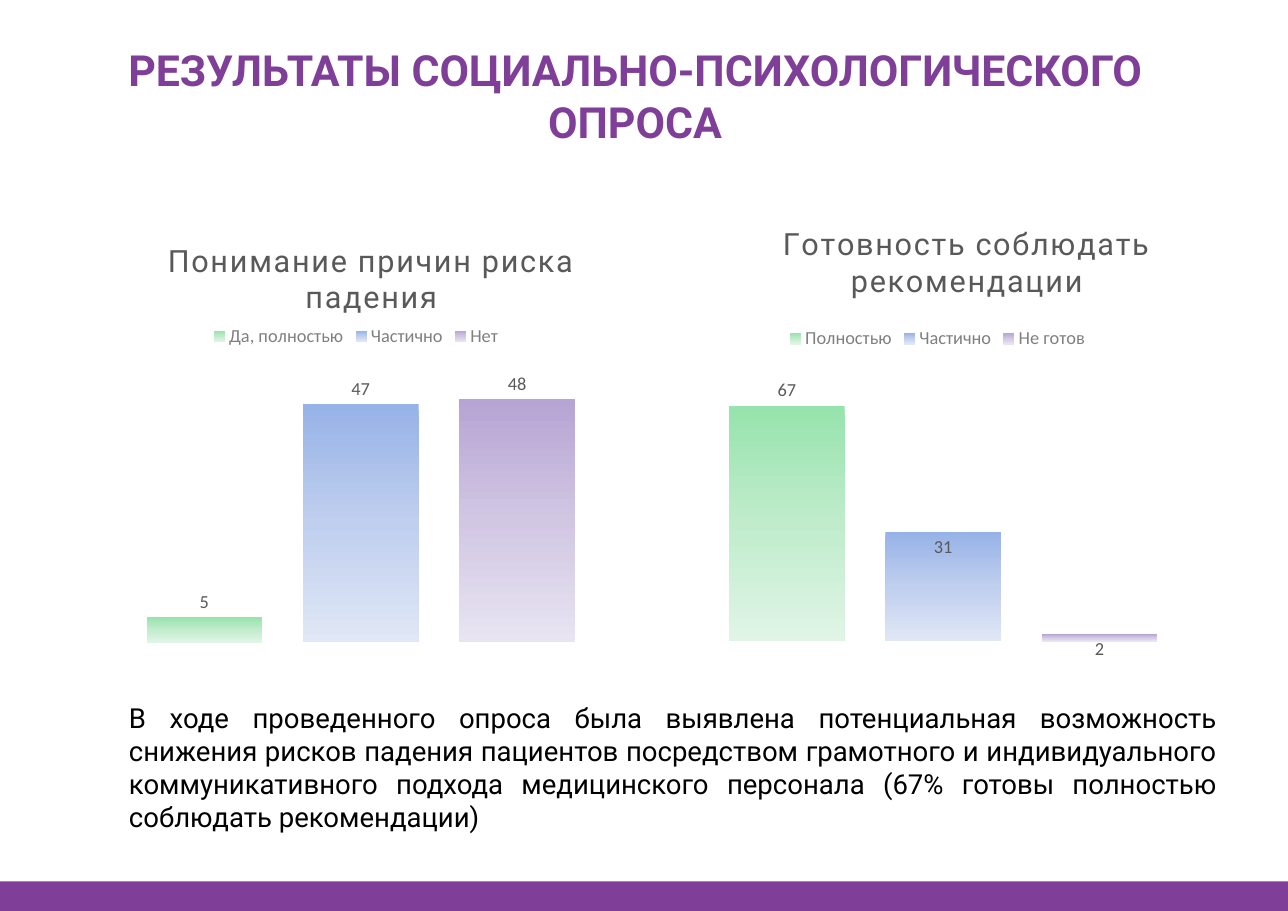
from copy import deepcopy
from dataclasses import dataclass
from typing import Any, NamedTuple

from lxml import etree
from pptx import Presentation
from pptx.chart.data import CategoryChartData
from pptx.dml.color import RGBColor
from pptx.enum.chart import XL_CHART_TYPE, XL_LABEL_POSITION, XL_LEGEND_POSITION
from pptx.enum.shapes import MSO_SHAPE
from pptx.enum.text import MSO_ANCHOR, MSO_AUTO_SIZE, PP_ALIGN
from pptx.oxml.ns import qn
from pptx.util import Cm, Pt

COLUMNS = XL_CHART_TYPE.COLUMN_CLUSTERED
ABOVE, INSIDE = XL_LABEL_POSITION.OUTSIDE_END, XL_LABEL_POSITION.INSIDE_END
LEGEND_TOP = XL_LEGEND_POSITION.TOP
RECTANGLE = MSO_SHAPE.RECTANGLE
TOP = MSO_ANCHOR.TOP
FIXED_SIZE = MSO_AUTO_SIZE.NONE
CENTER, JUSTIFY = PP_ALIGN.CENTER, PP_ALIGN.JUSTIFY


class TextStyle(NamedTuple):
    face: str
    size: int
    color: str
    bold: bool = False


@dataclass(frozen=True)
class Theme:
    purple: str = "7F3F98"
    heading: TextStyle = TextStyle("Roboto", 28, "7F3F98", True)
    conclusion: TextStyle = TextStyle("Roboto", 18, "000000")
    chart: TextStyle = TextStyle("Calibri", 10, "000000")
    question: TextStyle = TextStyle("Roboto", 20, "595959")
    legend: TextStyle = TextStyle("Calibri", 12, "808080")
    value: TextStyle = TextStyle("Calibri", 12, "595959")
    gradients: tuple[tuple[str, ...], ...] = (
        ("97E3AD", "C0ECCC", "E0F5E6"),
        ("97B2E7", "C0CFEE", "E0E7F6"),
        ("B6A4D4", "D1C7E3", "E8E4F1"),
    )


class Box(NamedTuple):
    left: float
    top: float
    width: float
    height: float

    def lengths(self) -> list[int]:
        return [Cm(value) for value in self]


class Answer(NamedTuple):
    label: str
    percent: int
    label_position: Any


@dataclass(frozen=True)
class Survey:
    question: str
    box: Box
    answers: tuple[Answer, ...]
    axis_maximum: int
    question_at: dict[str, float]
    legend_at: dict[str, float]
    plot_at: dict[str, float]


THEME = Theme()
SLIDE_WIDTH, SLIDE_HEIGHT = 29.7, 21.0
HEADING_BOX = Box(1.88, 0.89, 25.53, 2.64)
CONCLUSION_BOX = Box(2.72, 16.03, 25.6, 3.33)
FOOTER_BOX = Box(0, 20.32, SLIDE_WIDTH, 0.68)
HEADING = "РЕЗУЛЬТАТЫ СОЦИАЛЬНО-ПСИХОЛОГИЧЕСКОГО ОПРОСА"
CONCLUSION = (
    "В ходе проведенного опроса была выявлена потенциальная возможность снижения "
    "рисков падения пациентов посредством грамотного и индивидуального "
    "коммуникативного подхода медицинского персонала (67% готовы полностью "
    "соблюдать рекомендации)"
)
SURVEYS = (
    Survey(
        "Понимание причин риска падения",
        Box(0.74, 4.8, 15.01, 10.01),
        (Answer("Да, полностью", 5, ABOVE), Answer("Частично", 47, ABOVE), Answer("Нет", 48, ABOVE)),
        60,
        {"x": 0.2, "y": 0.06},
        {"x": 0.27, "y": 0.26},
        {"x": 0.03, "y": 0.3, "w": 0.95, "h": 0.7},
    ),
    Survey(
        "Готовность соблюдать рекомендации",
        Box(14.17, 4.8, 15.01, 10.62),
        (Answer("Полностью", 67, ABOVE), Answer("Частично", 31, INSIDE), Answer("Не готов", 2, INSIDE)),
        80,
        {"x": 0.25, "y": 0.02},
        {"x": 0.26, "y": 0.25},
        {"x": 0.03, "y": 0.33, "w": 0.95, "h": 0.61},
    ),
)


def apply(target: Any, values: dict[str, Any]) -> None:
    for attribute, value in values.items():
        setattr(target, attribute, value)


def style_font(font: Any, style: TextStyle) -> None:
    apply(font, {"name": style.face, "size": Pt(style.size), "bold": style.bold})
    font.color.rgb = RGBColor.from_string(style.color)


def place(part: Any, index: int, fractions: dict[str, float]) -> None:
    for old_layout in part.findall(qn("c:layout")):
        part.remove(old_layout)
    layout = etree.Element(qn("c:layout"))
    manual = etree.SubElement(layout, qn("c:manualLayout"))
    settings: dict[str, Any] = {"layoutTarget": "inner"} if "w" in fractions else {}
    settings |= {"xMode": "edge", "yMode": "edge"} | fractions
    for tag, value in settings.items():
        etree.SubElement(manual, qn(f"c:{tag}")).set("val", str(value))
    part.insert(index, layout)


def fill_placeholder(placeholder: Any, text: str, box: Box, style: TextStyle, alignment: Any) -> None:
    apply(placeholder, dict(zip(("left", "top", "width", "height"), box.lengths())))
    frame = placeholder.text_frame
    frame.text = text
    apply(frame, {"word_wrap": True, "auto_size": FIXED_SIZE, "vertical_anchor": TOP})
    paragraph = frame.paragraphs[0]
    apply(paragraph, {"alignment": alignment, "space_before": Pt(0), "line_spacing": 1.0})
    properties = paragraph._p.get_or_add_pPr()
    for indent in ("marL", "indent"):
        properties.set(indent, "0")
    etree.SubElement(properties, qn("a:buNone"))
    style_font(paragraph.runs[0].font, style)


def paint_gradient(series: Any, colors: tuple[str, ...]) -> None:
    fill = series.format.fill
    fill.gradient()
    fill.gradient_angle = 270
    stop_list = series._element.find(f".//{qn('a:gsLst')}")
    stop_list.insert(1, deepcopy(stop_list[0]))
    for position, (stop, color) in enumerate(zip(fill.gradient_stops, colors)):
        stop.position = position / 2
        stop.color.rgb = RGBColor.from_string(color)


def draw_survey(slide: Any, survey: Survey) -> None:
    data = CategoryChartData()
    data.categories = ["1"]
    for answer in survey.answers:
        data.add_series(answer.label, [answer.percent])
    chart = slide.shapes.add_chart(COLUMNS, *survey.box.lengths(), data).chart
    style_font(chart.font, THEME.chart)
    apply(chart, {"has_title": True, "has_legend": True})

    question = chart.chart_title.text_frame
    question.text = survey.question
    question_run = question.paragraphs[0].runs[0]
    style_font(question_run.font, THEME.question)
    question_run._r.get_or_add_rPr().set("spc", "100")
    apply(chart.legend, {"position": LEGEND_TOP, "include_in_layout": False})
    style_font(chart.legend.font, THEME.legend)

    place(chart.chart_title._element, 1, survey.question_at)
    place(chart.legend._element, 1, survey.legend_at)
    place(chart._chartSpace.chart.plotArea, 0, survey.plot_at)

    for axis in (chart.category_axis, chart.value_axis):
        apply(axis, {"visible": False, "has_major_gridlines": False})
    apply(chart.value_axis, {"minimum_scale": 0, "maximum_scale": survey.axis_maximum})
    plot = chart.plots[0]
    apply(plot, {"gap_width": 164, "overlap": -35, "vary_by_categories": False})
    for series, answer, colors in zip(plot.series, survey.answers, THEME.gradients):
        paint_gradient(series, colors)
        apply(series.data_labels, {"show_value": True, "position": answer.label_position})
        style_font(series.data_labels.font, THEME.value)


def draw_footer(slide: Any) -> None:
    footer = slide.shapes.add_shape(RECTANGLE, *FOOTER_BOX.lengths())
    footer.shadow.inherit = False
    footer.fill.solid()
    footer.fill.fore_color.rgb = RGBColor.from_string(THEME.purple)
    footer.line.fill.background()


def main() -> None:
    presentation = Presentation()
    apply(presentation, {"slide_width": Cm(SLIDE_WIDTH), "slide_height": Cm(SLIDE_HEIGHT)})
    slide = presentation.slides.add_slide(presentation.slide_layouts[1])
    for survey in SURVEYS:
        draw_survey(slide, survey)
    fill_placeholder(slide.placeholders[1], CONCLUSION, CONCLUSION_BOX, THEME.conclusion, JUSTIFY)
    fill_placeholder(slide.shapes.title, HEADING, HEADING_BOX, THEME.heading, CENTER)
    draw_footer(slide)
    presentation.save("out.pptx")


if __name__ == "__main__":
    main()
